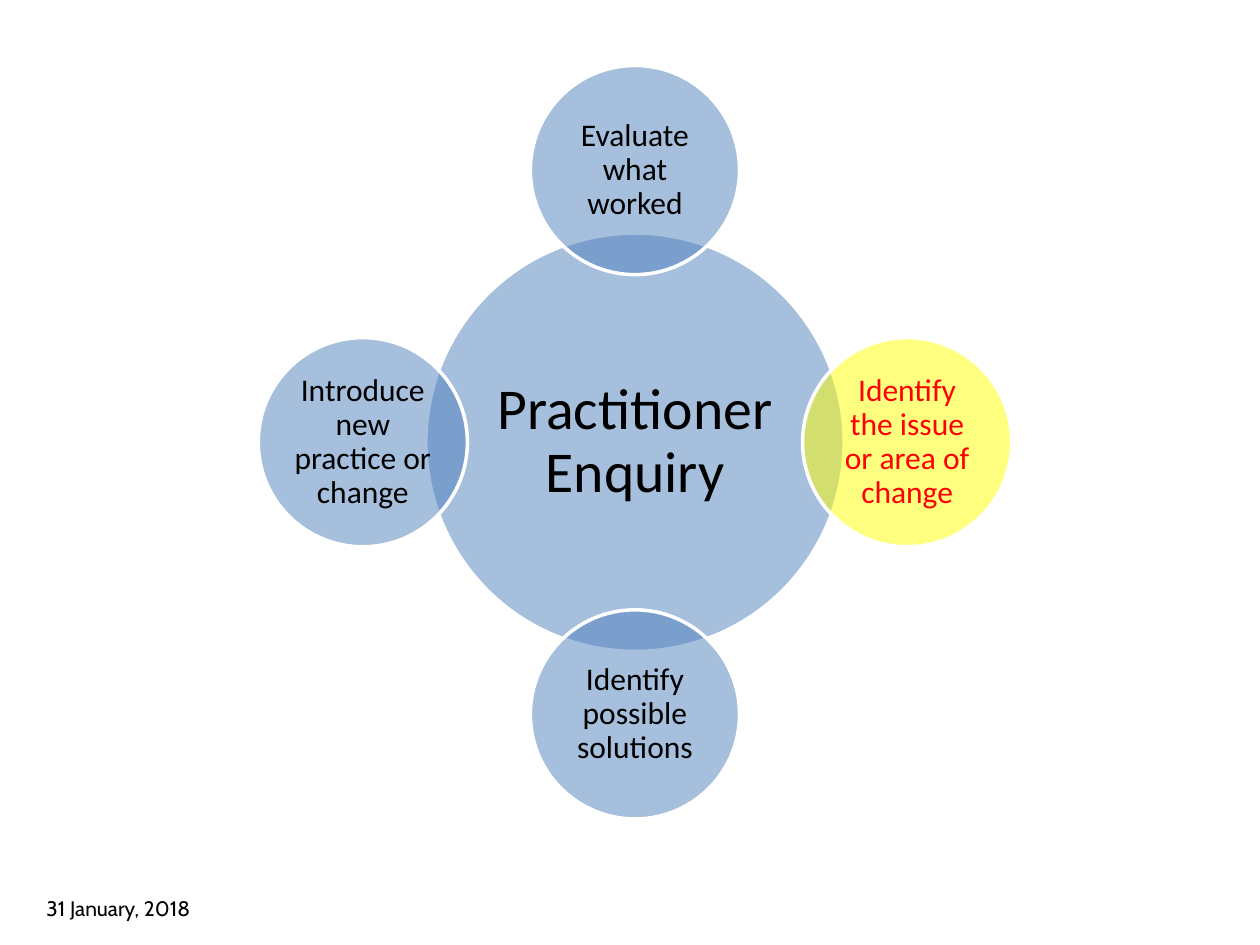
import math

from lxml import etree
from pptx import Presentation
from pptx.dml.color import RGBColor
from pptx.enum import shapes, text
from pptx.oxml import ns
from pptx.util import Inches, Pt

COLORS = {
    "blue": "4F81BD",
    "yellow": "FFFF00",
    "red": "FF0000",
    "black": "000000",
    "white": "FFFFFF",
}

# Clockwise from the top: wording, fill, text colour
STEPS = [
    ("Evaluate what worked", "blue", "black"),
    ("Identify the issue or area of change", "yellow", "red"),
    ("Identify possible solutions", "blue", "black"),
    ("Introduce new practice or change", "blue", "black"),
]


def color(name):
    return RGBColor.from_string(COLORS[name])


def format_text(paragraph, font_name, size, color_name):
    font = paragraph.runs[0].font
    font.name = font_name
    font.size = Pt(size)
    font.color.rgb = color(color_name)


def add_circle(slide, center_x, center_y, diameter, wording, size, inset,
               fill="blue", text_color="black"):
    """Half-transparent circle with centred text."""
    circle = slide.shapes.add_shape(
        shapes.MSO_SHAPE.OVAL,
        Inches(center_x - diameter / 2), Inches(center_y - diameter / 2),
        Inches(diameter), Inches(diameter))
    circle.shadow.inherit = False
    circle.fill.solid()
    circle.fill.fore_color.rgb = color(fill)
    fill_color = circle.fill._xPr.find(".//" + ns.qn("a:srgbClr"))
    etree.SubElement(fill_color, ns.qn("a:alpha")).set("val", "50000")
    circle.line.color.rgb = color("white")
    circle.line.width = Pt(2)

    frame = circle.text_frame
    frame.text = wording
    frame.word_wrap = True
    frame.vertical_anchor = text.MSO_ANCHOR.MIDDLE
    frame.margin_left = frame.margin_right = Inches(inset)
    frame.margin_top = frame.margin_bottom = Inches(inset)
    paragraph = frame.paragraphs[0]
    paragraph.alignment = text.PP_ALIGN.CENTER
    paragraph.line_spacing = 0.9
    format_text(paragraph, "Calibri", size, text_color)


def add_cycle(slide, left, top, side):
    """Central circle with the steps evenly spaced around it."""
    center_x, center_y = left + side / 2, top + side / 2
    step_diameter = 1.66
    orbit = (side - step_diameter) / 2
    add_circle(slide, center_x, center_y, 2 * step_diameter,
               "Practitioner Enquiry", 33, 0.05)
    for index, (wording, fill, text_color) in enumerate(STEPS):
        angle = 2 * math.pi * index / len(STEPS)
        add_circle(slide, center_x + orbit * math.sin(angle),
                   center_y - orbit * math.cos(angle), step_diameter,
                   wording, 18, 0.03, fill, text_color)


def add_date(slide, left, top, width, height):
    box = slide.shapes.add_textbox(
        Inches(left), Inches(top), Inches(width), Inches(height))
    box.text_frame.text = "31 January, 2018"
    box.text_frame.word_wrap = True
    format_text(box.text_frame.paragraphs[0], "Cabin", 12, "black")


def main():
    presentation = Presentation()
    presentation.slide_width = Inches(10)
    presentation.slide_height = Inches(7.5)
    slide = presentation.slides.add_slide(presentation.slide_layouts[6])
    add_date(slide, 0.27, 7.06, 2.95, 0.3)
    add_cycle(slide, 2.05, 0.52, 5.98)
    presentation.save("out.pptx")


if __name__ == "__main__":
    main()
